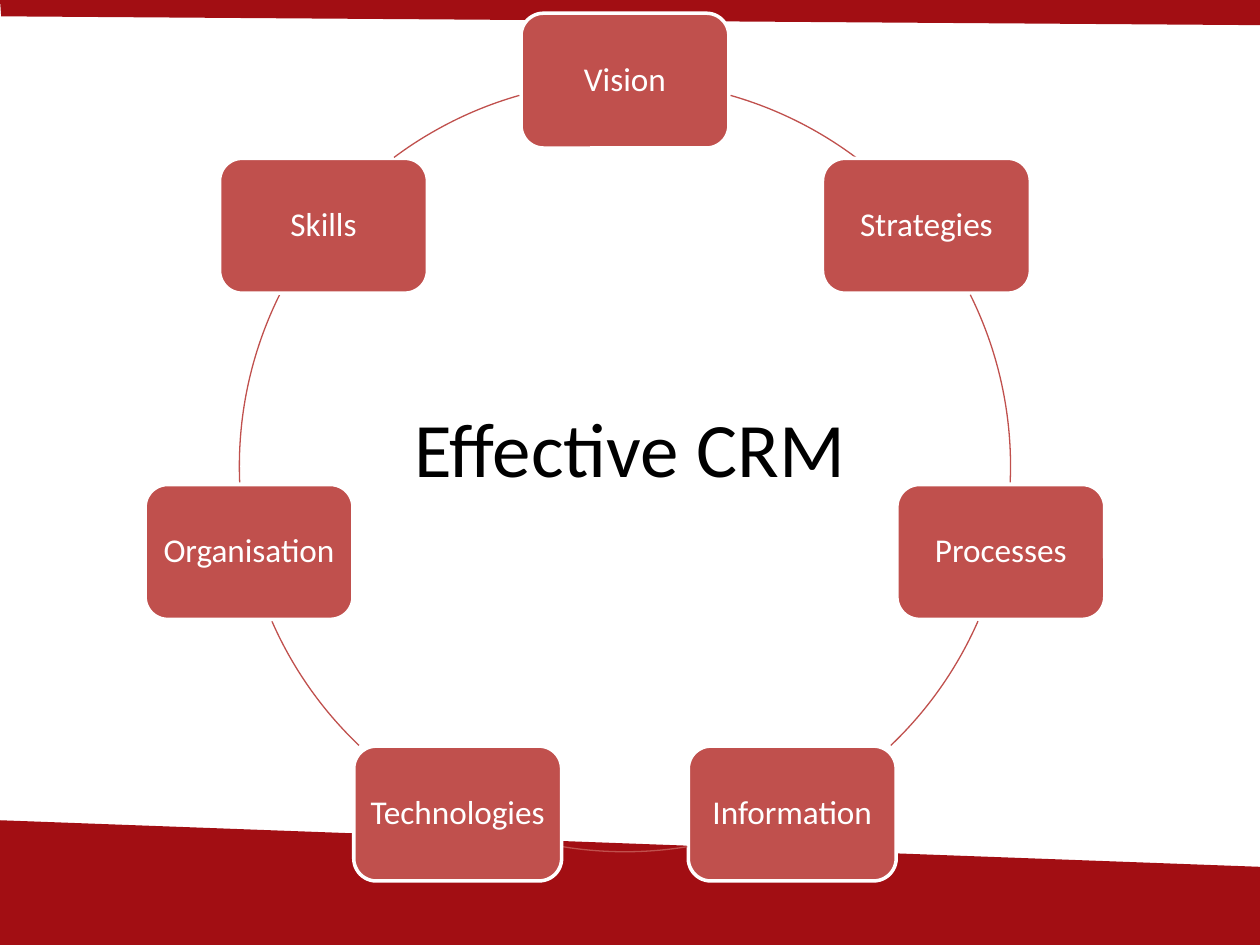
"""Build the Effective CRM cycle slide: seven linked topics around a title."""
from math import cos, pi, sin

from pptx import Presentation
from pptx.dml.color import RGBColor
from pptx.enum.shapes import MSO_SHAPE as Preset
from pptx.enum.text import MSO_ANCHOR as Anchor, PP_ALIGN as Align
from pptx.util import Inches, Pt

BAND_RED = RGBColor(0xA2, 0x0E, 0x13)
TOPIC_RED = RGBColor(0xC0, 0x50, 0x4D)
WHITE = RGBColor(0xFF, 0xFF, 0xFF)
BLACK = RGBColor(0, 0, 0)

CENTER_X, CENTER_Y, RADIUS = 4.96, 3.7, 3.06
TOPIC_WIDTH, TOPIC_HEIGHT = 1.65, 1.07


def write(shape, text, size, color, inset=0.08, spacing=1.0):
    frame = shape.text_frame
    frame.word_wrap = True
    frame.vertical_anchor = Anchor.MIDDLE
    frame.margin_left = frame.margin_right = Inches(inset)
    frame.margin_top = frame.margin_bottom = Inches(inset)
    paragraph = frame.paragraphs[0]
    paragraph.alignment = Align.CENTER
    paragraph.line_spacing = spacing
    run = paragraph.add_run()
    run.text = text
    run.font.name = "Calibri"
    run.font.size = Pt(size)
    run.font.color.rgb = color


deck = Presentation()
deck.slide_width, deck.slide_height = Inches(10), Inches(7.5)
slide = deck.slides.add_slide(deck.slide_layouts[6])
shapes = slide.shapes

bands = [
    [(0, 0), (10, 0), (10, 0.2), (0.01, 0.13)],
    [(0, 6.51), (10, 6.88), (10, 7.5), (0, 7.5)],
]
for corners in bands:
    points = [(Inches(x), Inches(y)) for x, y in corners]
    outline = shapes.build_freeform(*points[0])
    outline.add_line_segments(points[1:], close=True)
    band = outline.convert_to_shape()
    band.shadow.inherit = False
    band.fill.solid()
    band.fill.fore_color.rgb = BAND_RED
    band.line.fill.background()

right_links = [(285.9, 306.8), (333.6, 2.4), (23.7, 46.4)]
left_links = [(180 - end, 180 - start) for start, end in reversed(right_links)]
links = right_links + [(80.7, 99.3)] + left_links
topics = ["Vision", "Strategies", "Processes", "Information",
          "Technologies", "Organisation", "Skills"]

for index, (topic, (start, end)) in enumerate(zip(topics, links)):
    angle = 2 * pi * index / len(topics)
    left = CENTER_X + RADIUS * sin(angle) - TOPIC_WIDTH / 2
    top = CENTER_Y - RADIUS * cos(angle) - TOPIC_HEIGHT / 2
    box = shapes.add_shape(Preset.ROUNDED_RECTANGLE, Inches(left), Inches(top),
                           Inches(TOPIC_WIDTH), Inches(TOPIC_HEIGHT))
    box.shadow.inherit = False
    box.fill.solid()
    box.fill.fore_color.rgb = TOPIC_RED
    box.line.color.rgb = WHITE
    box.line.width = Pt(2)
    write(box, topic, 19, WHITE, spacing=0.9)

    link = shapes.add_shape(Preset.ARC, Inches(CENTER_X - RADIUS), Inches(CENTER_Y - RADIUS),
                            Inches(2 * RADIUS), Inches(2 * RADIUS))
    link.shadow.inherit = False
    link.adjustments[0] = start % 360 * 0.6
    link.adjustments[1] = end % 360 * 0.6
    link.fill.background()
    link.line.color.rgb = TOPIC_RED
    link.line.width = Pt(0.75)

title = shapes.add_textbox(Inches(0.5), Inches(2.92), Inches(9), Inches(1.25))
write(title, "Effective CRM", 44, BLACK, inset=0.05)

deck.save("out.pptx")
